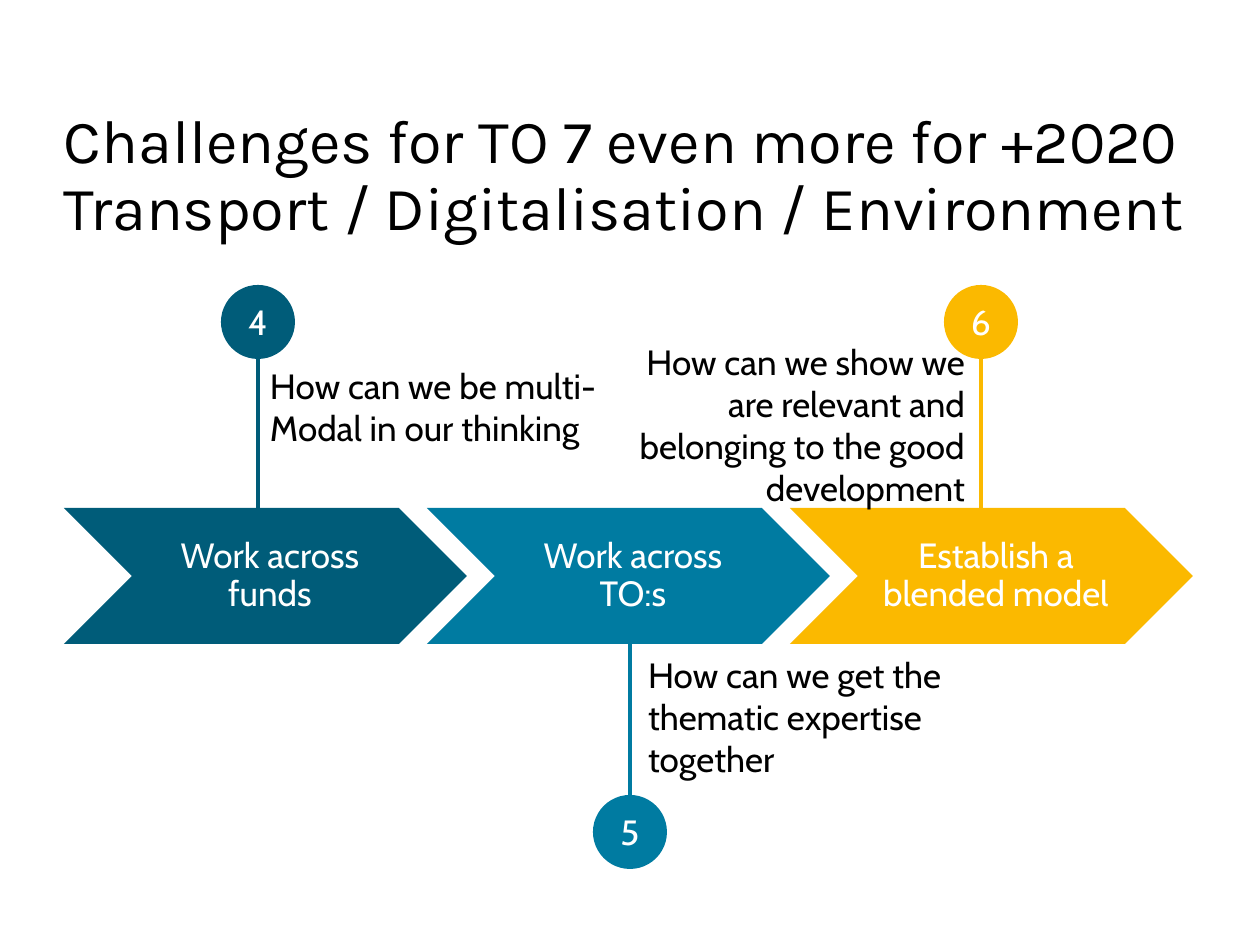
from dataclasses import dataclass

from lxml.etree import SubElement
from pptx import Presentation
from pptx.dml.color import RGBColor
from pptx.enum.shapes import MSO_CONNECTOR as Connector, MSO_SHAPE as Shape
from pptx.enum.text import MSO_ANCHOR as Anchor, MSO_AUTO_SIZE as AutoSize, PP_ALIGN as Align
from pptx.oxml.ns import qn
from pptx.util import Emu, Pt

PX = 914400 / 126
COLORS = {
    "navy": "005C79",
    "teal": "007BA1",
    "amber": "FBB900",
    "white": "FFFFFF",
    "black": "000000",
}
CHEVRON_LEFT, CHEVRON_TOP, CHEVRON_PITCH = 64, 508, 363
CHEVRON_WIDTH, CHEVRON_HEIGHT = 403, 136
LABEL_INSET, LABEL_WIDTH = 69, 267
BADGE_SIZE = 74


@dataclass(frozen=True)
class Box:
    left: int
    top: int
    width: int
    height: int

    def emu(self) -> tuple[Emu, ...]:
        return tuple(px(n) for n in (self.left, self.top, self.width, self.height))


@dataclass(frozen=True)
class Step:
    label: str
    color: str
    number: str
    badge_top: int
    stem_x: int
    stem_top: int
    stem_bottom: int
    question: tuple[str, ...]
    question_box: Box
    align: Align = Align.LEFT
    anchor: Anchor = Anchor.TOP


STEPS = (
    Step("Work across funds", "navy", "4", 285, 258, 358, 510,
         ("How can we be multi-", "Modal in our thinking"), Box(270, 364, 353, 84)),
    Step("Work across TO:s", "teal", "5", 795, 630, 643, 795,
         ("How can we get the thematic expertise together",), Box(648, 653, 334, 127),
         anchor=Anchor.BOTTOM),
    Step("Establish a blended model", "amber", "6", 285, 981, 358, 518,
         ("How can we show we are relevant and belonging to the good development",),
         Box(635, 340, 330, 170), align=Align.RIGHT),
)


def px(length: int) -> Emu:
    return Emu(round(length * PX))


def rgb(name: str) -> RGBColor:
    return RGBColor.from_string(COLORS[name])


def write(shape, lines: tuple[str, ...], color: str, align: Align, anchor: Anchor,
          font: str = "Cabin", size: int = 20, spacing: float = 1.0,
          insets: tuple[int, int, int, int] = (0, 0, 0, 0)) -> None:
    frame = shape.text_frame
    frame.text = "\n".join(lines)
    frame.word_wrap = True
    frame.auto_size = AutoSize.NONE
    frame.vertical_anchor = anchor
    (frame.margin_left, frame.margin_top,
     frame.margin_right, frame.margin_bottom) = map(px, insets)
    for paragraph in frame.paragraphs:
        paragraph.alignment = align
        paragraph.line_spacing = spacing
        paragraph.font.name = font
        paragraph.font.size = Pt(size)
        paragraph.font.color.rgb = rgb(color)


def add_solid(slide, kind: Shape, box: Box, color: str):
    solid = slide.shapes.add_shape(kind, *box.emu())
    solid.shadow.inherit = False
    solid.fill.solid()
    solid.fill.fore_color.rgb = rgb(color)
    solid.line.fill.background()
    return solid


def add_chevron(slide, step: Step, index: int) -> None:
    left = CHEVRON_LEFT + index * CHEVRON_PITCH
    add_solid(slide, Shape.CHEVRON,
              Box(left, CHEVRON_TOP, CHEVRON_WIDTH, CHEVRON_HEIGHT), step.color)
    label_box = Box(left + LABEL_INSET, CHEVRON_TOP, LABEL_WIDTH, CHEVRON_HEIGHT)
    label = slide.shapes.add_textbox(*label_box.emu())
    write(label, (step.label,), "white", Align.CENTER, Anchor.MIDDLE,
          spacing=0.9, insets=(11, 4, 4, 4))


def add_callout(slide, step: Step) -> None:
    question = slide.shapes.add_textbox(*step.question_box.emu())
    write(question, step.question, "black", step.align, step.anchor)

    stem = slide.shapes.add_connector(
        Connector.STRAIGHT, px(step.stem_x), px(step.stem_top),
        px(step.stem_x), px(step.stem_bottom))
    stem.line.color.rgb = rgb(step.color)
    stem.line.width = Pt(2)
    SubElement(stem._element.spPr, qn("a:effectLst"))

    badge_box = Box(step.stem_x - BADGE_SIZE // 2, step.badge_top, BADGE_SIZE, BADGE_SIZE)
    badge = add_solid(slide, Shape.OVAL, badge_box, step.color)
    write(badge, (step.number,), "white", Align.CENTER, Anchor.MIDDLE)


def main() -> None:
    deck = Presentation()
    deck.slide_width, deck.slide_height = px(1260), px(945)
    slide = deck.slides.add_slide(deck.slide_layouts[5])

    title = slide.shapes.title
    title.left, title.top, title.width, title.height = Box(64, 111, 1132, 189).emu()
    write(title,
          ("Challenges for TO 7 even more for +2020 Transport / Digitalisation / Environment",),
          "black", Align.LEFT, Anchor.TOP, font="Karla", size=35, spacing=0.9)

    for index, step in enumerate(STEPS):
        add_chevron(slide, step, index)
    for step in STEPS:
        add_callout(slide, step)

    deck.save("out.pptx")


if __name__ == "__main__":
    main()
